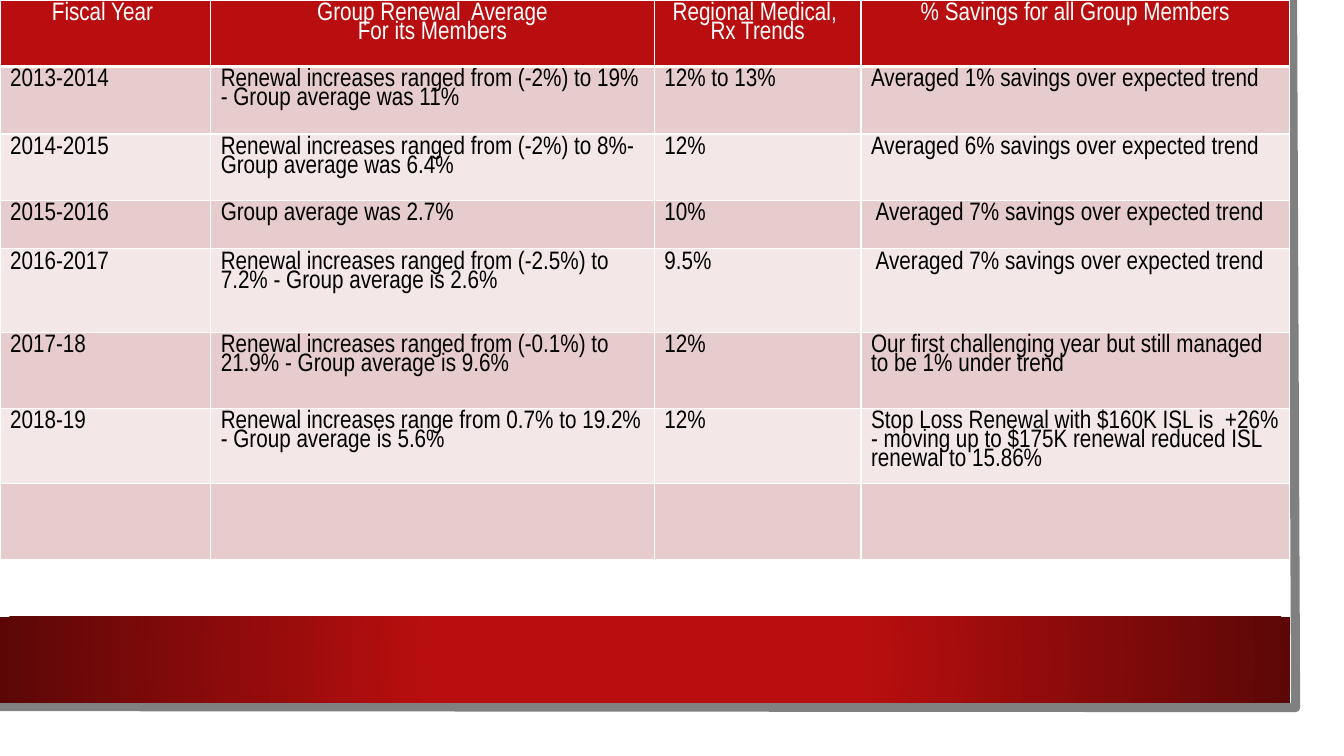
from lxml import etree
from pptx import Presentation
from pptx.dml.color import RGBColor
from pptx.enum.shapes import MSO_SHAPE
from pptx.enum.text import PP_ALIGN
from pptx.oxml import parse_xml
from pptx.oxml.ns import qn
from pptx.util import Inches, Pt

RECT = MSO_SHAPE.RECTANGLE
CENTER, LEFT = PP_ALIGN.CENTER, PP_ALIGN.LEFT
NS = 'xmlns:a="http://schemas.openxmlformats.org/drawingml/2006/main"'
RED, DARK, WHITE, BLACK, GRAY = "B80E0F", "5C0707", "FFFFFF", "000000", "808080"
BANDS = ["E6CCCC", "F3E7E7"]
COLS = [2.09, 4.4, 2.05, 4.25]
ROWS = [0.66, 0.67, 0.66, 0.48, 0.83, 0.75, 0.75, 0.75]
DATA = [
    ["Fiscal Year ", "Group Renewal  Average\nFor its Members",
     "Regional Medical, \nRx Trends", "% Savings for all Group Members"],
    ["2013-2014",
     "Renewal increases ranged from (-2%) to 19% - Group average was 11%",
     "12% to 13%", "Averaged 1% savings over expected trend"],
    ["2014-2015",
     "Renewal increases ranged from (-2%) to 8%- Group average was 6.4%",
     "12%", "Averaged 6% savings over expected trend"],
    ["2015-2016", "Group average was 2.7%",
     "10%", " Averaged 7% savings over expected trend"],
    ["2016-2017",
     "Renewal increases ranged from (-2.5%) to 7.2% - Group average is 2.6%",
     "9.5%", " Averaged 7% savings over expected trend"],
    ["2017-18",
     "Renewal increases ranged from (-0.1%) to 21.9% - Group average is 9.6%",
     "12%", "Our first challenging year but still managed to be 1% under trend"],
    ["2018-19",
     "Renewal increases range from 0.7% to 19.2% - Group average is 5.6%",
     "12%", "Stop Loss Renewal with $160K ISL is  +26% - moving up to $175K "
     "renewal reduced ISL renewal to 15.86%"],
    [""] * 4,
]


def color(code):
    return RGBColor.from_string(code)


def style(item, values):
    for name, value in values.items():
        setattr(item, name, value)


def panel(slide, x, y, w, h, fill):
    shape = slide.shapes.add_shape(RECT, *map(Inches, (x, y, w, h)))
    shape.shadow.inherit = False
    shape.fill.solid()
    shape.fill.fore_color.rgb = color(fill)
    shape.line.fill.background()
    return shape


def edge(slide, x, y, w, h):
    build = slide.shapes.build_freeform(Inches(x + w - 0.03), Inches(y), scale=1)
    points = [(x + w, y + h), (x, y + h - 0.01)]
    build.add_line_segments([(Inches(a), Inches(b)) for a, b in points], close=False)
    shape = build.convert_to_shape()
    shape.shadow.inherit = False
    shape.fill.background()
    shape.line.color.rgb = color(GRAY)
    shape.line.width = Pt(6.5)


def footer(slide, x, y, w, h):
    shape = panel(slide, x, y, w, h, RED)
    stops = "".join(
        f'<a:gs pos="{pos}000"><a:srgbClr val="{code}"/></a:gs>'
        for pos, code in ((34, RED), (100, DARK)))
    grad = parse_xml(
        f'<a:gradFill {NS} rotWithShape="1"><a:gsLst>{stops}</a:gsLst>'
        '<a:path path="circle"><a:fillToRect l="50000" t="50000" '
        'r="50000" b="50000"/></a:path></a:gradFill>')
    props = shape.fill._xPr
    props.replace(props.find(qn("a:solidFill")), grad)


def border(cell, widths):
    props = cell._tc.get_or_add_tcPr()
    for side, width in zip("LRTB", widths):
        line = etree.SubElement(props, qn(f"a:ln{side}"), w=str(Pt(width)))
        fill = etree.SubElement(line, qn("a:solidFill"))
        etree.SubElement(fill, qn("a:srgbClr"), val=WHITE)


def fill_cell(cell, text, row):
    head = row == 0
    border(cell, (1, 1, 3 if row == 1 else 1, 3 if head else 1))
    cell.fill.solid()
    cell.fill.fore_color.rgb = color(RED if head else BANDS[(row - 1) % 2])
    cell.text = text
    for para in cell.text_frame.paragraphs:
        style(para, {"alignment": CENTER if head else LEFT, "line_spacing": 0.8})
        style(para.font, {"name": "Arial Narrow", "size": Pt(18), "bold": False})
        para.font.color.rgb = color(WHITE if head else BLACK)


def trends(slide, x, y):
    frame = slide.shapes.add_table(
        len(ROWS), len(COLS), Inches(x), Inches(y),
        Inches(sum(COLS)), Inches(sum(ROWS)))
    table = frame.table
    for col, width in zip(table.columns, COLS):
        col.width = Inches(width)
    for row, height in zip(table.rows, ROWS):
        row.height = Inches(height)
    for r, texts in enumerate(DATA):
        for c, text in enumerate(texts):
            fill_cell(table.cell(r, c), text, r)


def main():
    deck = Presentation()
    style(deck, {"slide_width": Inches(13.33), "slide_height": Inches(7.5)})
    slide = deck.slides.add_slide(deck.slide_layouts[6])
    panel(slide, 0, 0, 13.1, 7.27, WHITE)
    edge(slide, -0.03, 0, 12.88, 7.02)
    footer(slide, 0, 6.12, 12.8, 0.85)
    trends(slide, 0, 0)
    deck.save("out.pptx")


if __name__ == "__main__":
    main()
